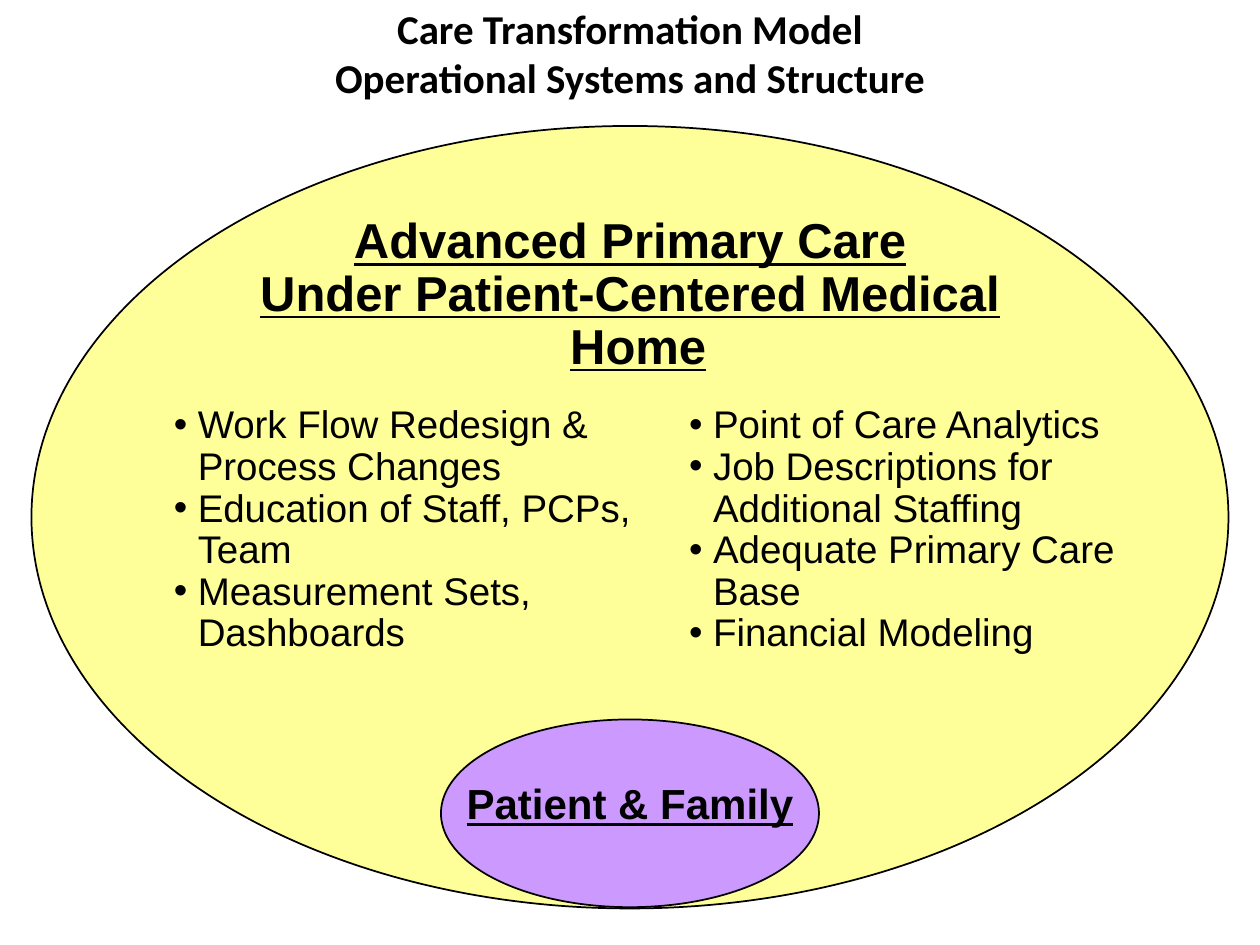
from dataclasses import dataclass

from lxml import etree
from pptx import Presentation
from pptx import util as u
from pptx.dml import color
from pptx.enum import shapes, text
from pptx.oxml import ns


@dataclass(frozen=True)
class Theme:
    ink: str = "000000"
    care: str = "FFFF99"
    patient: str = "CC99FF"
    title_font: str = "Calibri"
    body_font: str = "Arial"
    title_size: float = 23.4
    heading_size: float = 28
    patient_size: float = 24
    bullet_size: float = 22
    line_width: float = 1
    line_spacing: float = 0.9


THEME = Theme()

LEFT_BULLETS = [
    "Work Flow Redesign & Process Changes",
    "Education of Staff, PCPs, Team",
    "Measurement Sets, Dashboards",
]
RIGHT_BULLETS = [
    "Point of Care Analytics",
    "Job Descriptions for Additional Staffing",
    "Adequate Primary Care Base",
    "Financial Modeling",
]


def rgb(value):
    return color.RGBColor.from_string(value)


def add_ellipse(slide, box, fill):
    shape = slide.shapes.add_shape(shapes.MSO_SHAPE.OVAL, *map(u.Inches, box))
    shape.shadow.inherit = False
    shape.fill.solid()
    shape.fill.fore_color.rgb = rgb(fill)
    shape.line.color.rgb = rgb(THEME.ink)
    shape.line.width = u.Pt(THEME.line_width)


def add_text(slide, box, lines, size, font=THEME.body_font, bold=False, underline=False,
             align=text.PP_ALIGN.CENTER):
    frame = slide.shapes.add_textbox(*map(u.Inches, box)).text_frame
    frame.word_wrap = True
    frame.margin_left = frame.margin_right = u.Inches(0.05)
    frame.margin_top = frame.margin_bottom = u.Inches(0.05)
    frame.text = "\n".join(lines)
    for paragraph in frame.paragraphs:
        paragraph.alignment = align
        for run in paragraph.runs:
            run.font.name = font
            run.font.size = u.Pt(size)
            run.font.bold = bold
            run.font.underline = underline
            run.font.color.rgb = rgb(THEME.ink)
    return frame


def set_spacing(frame, indent):
    """Tighten the lines and give each paragraph a hanging indent."""
    for paragraph in frame.paragraphs:
        paragraph.line_spacing = THEME.line_spacing
        properties = paragraph._p.get_or_add_pPr()
        properties.set("marL", str(u.Inches(indent)))
        properties.set("indent", str(-u.Inches(indent)))


def add_heading(slide, box, lines, size):
    frame = add_text(slide, box, lines, size, bold=True, underline=True)
    set_spacing(frame, 0.13)


def add_bullets(slide, box, items):
    frame = add_text(slide, box, items, THEME.bullet_size, align=text.PP_ALIGN.LEFT)
    set_spacing(frame, 0.19)
    for paragraph in frame.paragraphs:
        properties = paragraph._p.get_or_add_pPr()
        etree.SubElement(properties, ns.qn("a:buFont"), typeface=THEME.body_font)
        etree.SubElement(properties, ns.qn("a:buChar"), char="•")


def main():
    presentation = Presentation()
    presentation.slide_width = u.Inches(10)
    presentation.slide_height = u.Inches(7.5)
    slide = presentation.slides.add_slide(presentation.slide_layouts[6])

    # Nested ellipses
    add_ellipse(slide, (0.25, 1, 9.5, 6.21), THEME.care)
    add_ellipse(slide, (3.5, 5.71, 3, 1.49), THEME.patient)

    # Title, with a line break inside one paragraph
    title = add_text(slide, (0, 0, 10, 0.83),
                     ["Care Transformation Model\vOperational Systems and Structure"],
                     THEME.title_size, THEME.title_font, bold=True)
    title.vertical_anchor = text.MSO_ANCHOR.MIDDLE

    # Ellipse headings
    add_heading(slide, (3.5, 6.17, 3, 0.46), ["Patient & Family"], THEME.patient_size)
    add_heading(slide, (1.75, 1.67, 6.5, 1.36),
                ["Advanced Primary Care", "Under Patient-Centered Medical Home"],
                THEME.heading_size)

    # Two bullet columns
    add_bullets(slide, (1.33, 3.17, 3.83, 2.08), LEFT_BULLETS)
    add_bullets(slide, (5.42, 3.17, 3.5, 2.08), RIGHT_BULLETS)

    presentation.save("out.pptx")


if __name__ == "__main__":
    main()
